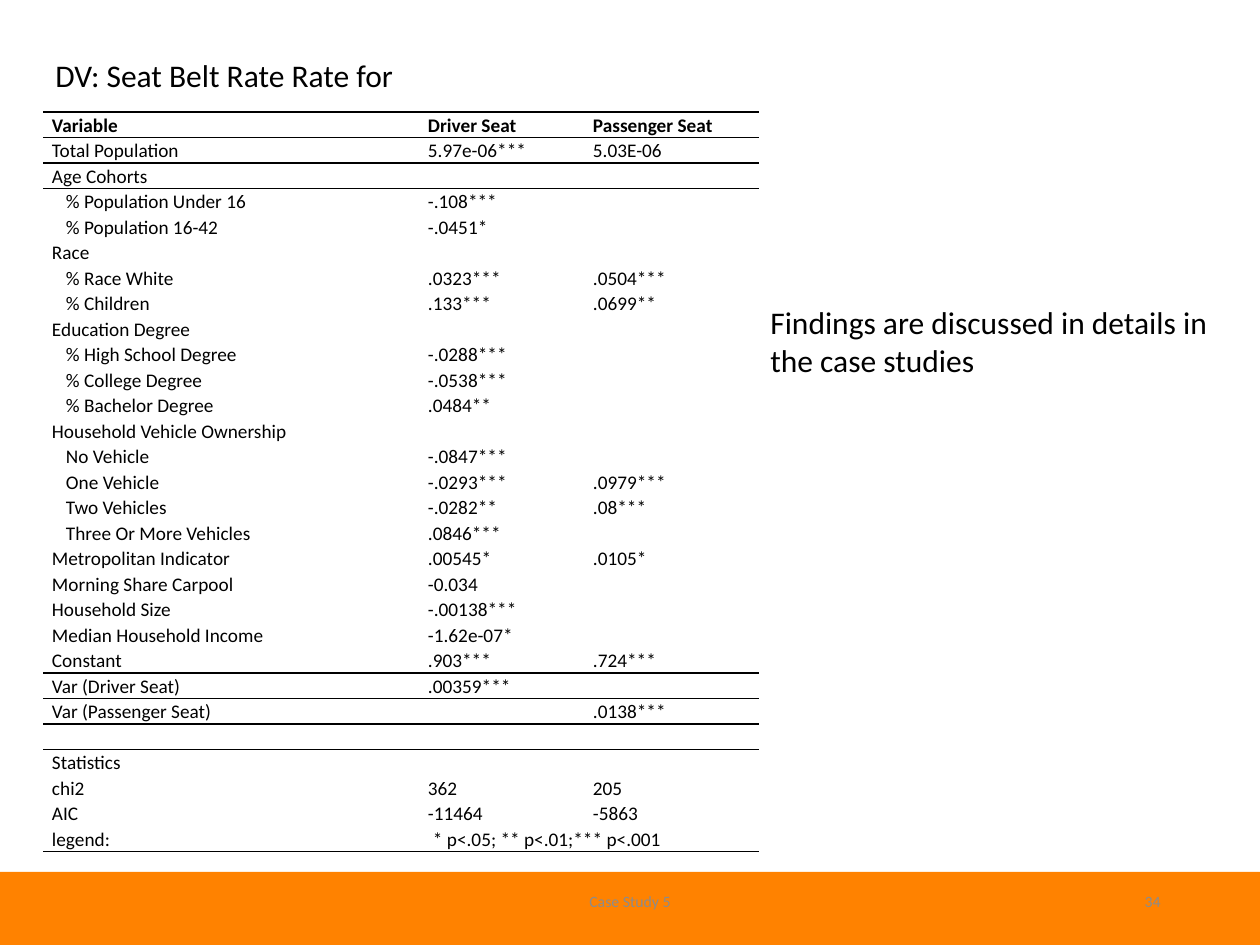
from typing import NamedTuple

from lxml.etree import SubElement
from pptx import Presentation
from pptx.dml.color import RGBColor
from pptx.enum.shapes import MSO_SHAPE as Shape
from pptx.enum.text import MSO_ANCHOR as Anchor, MSO_AUTO_SIZE as Fit, PP_ALIGN as Align
from pptx.oxml import parse_xml
from pptx.oxml.ns import nsdecls, qn
from pptx.util import Emu, Pt

SCALE = 914400 / 126
FONT = "Calibri"
PLAIN = "{2D5ABB26-0587-4C30-8999-92F81FD0307C}"


class Row(NamedTuple):
    name: str
    driver: str = ""
    rider: str = ""
    indent: int = 0


class Label(NamedTuple):
    text: str
    x: int
    y: int
    w: int
    h: int
    size: int = 18
    color: str = "000000"
    align: Align = Align.LEFT
    anchor: Anchor = Anchor.TOP
    fit: Fit = Fit.SHAPE_TO_FIT_TEXT


SUB = 14
ROWS = [
    Row("Variable", "Driver Seat", "Passenger Seat"),
    Row("Total Population", "5.97e-06***", "5.03E-06"),
    Row("Age Cohorts"),
    Row("% Population Under 16", "-.108***", indent=SUB),
    Row("% Population 16-42", "-.0451*", indent=SUB),
    Row("Race"),
    Row("% Race White", ".0323***", ".0504***", SUB),
    Row("% Children", ".133***", ".0699**", SUB),
    Row("Education Degree"),
    Row("% High School Degree", "-.0288***", indent=SUB),
    Row("% College Degree", "-.0538***", indent=SUB),
    Row("% Bachelor Degree", ".0484**", indent=SUB),
    Row("Household Vehicle Ownership"),
    Row("No Vehicle", "-.0847***", indent=SUB),
    Row("One Vehicle", "-.0293***", ".0979***", SUB),
    Row("Two Vehicles", "-.0282**", ".08***", SUB),
    Row("Three Or More Vehicles", ".0846***", indent=SUB),
    Row("Metropolitan Indicator", ".00545*", ".0105*"),
    Row("Morning Share Carpool", "-0.034"),
    Row("Household Size", "-.00138***"),
    Row("Median Household Income", "-1.62e-07*"),
    Row("Constant", ".903***", ".724***"),
    Row("Var (Driver Seat)", ".00359***"),
    Row("Var (Passenger Seat)", "", ".0138***"),
    Row(""),
    Row("Statistics"),
    Row("chi2", "362", "205"),
    Row("AIC", "-11464", "-5863"),
    Row("legend:", "* p<.05; ** p<.01;*** p<.001"),
]
LAST = len(ROWS) - 1
RULED = {0, 1, 21, 23, LAST}  # rows with a line below
COLS = [376, 165, 175]
LABELS = [
    Label("Case Study 5", 417, 876, 426, 50, 9, "8C8C8C", Align.CENTER, Anchor.MIDDLE, Fit.NONE),
    Label("34", 890, 876, 283, 50, 9, "8C8C8C", Align.RIGHT, Anchor.MIDDLE, Fit.NONE),
    Label("DV: Seat Belt Rate Rate for", 43, 50, 466, 50),
    Label("Findings are discussed in details in the case studies", 758, 297, 466, 89),
]


def px(n: int) -> Emu:
    return Emu(round(n * SCALE))


def rgb(color: str) -> RGBColor:
    return RGBColor.from_string(color)


def style(para, size: int, color: str = "000000", bold: bool = False) -> None:
    for run in para.runs:
        font = run.font
        font.name, font.size, font.bold = FONT, Pt(size), bold
        font.color.rgb = rgb(color)


def add_label(slide, item: Label) -> None:
    box = slide.shapes.add_textbox(*map(px, (item.x, item.y, item.w, item.h)))
    frame = box.text_frame
    frame.text = item.text
    frame.word_wrap = True
    frame.auto_size = item.fit
    frame.vertical_anchor = item.anchor
    para = frame.paragraphs[0]
    para.alignment = item.align
    style(para, item.size, item.color)


def add_lines(cell, top: bool, bottom: bool) -> None:
    props = cell._tc.get_or_add_tcPr()
    sides = [tag for tag, on in (("lnT", top), ("lnB", bottom)) if on]
    for i, tag in enumerate(sides):
        props.insert(i, parse_xml(
            f'<a:{tag} {nsdecls("a")} w="12700"><a:solidFill>'
            f'<a:srgbClr val="000000"/></a:solidFill></a:{tag}>'))


def fill_cell(cell, text: str, indent: int, bold: bool) -> None:
    cell.margin_left = cell.margin_right = px(9)
    cell.margin_top = cell.margin_bottom = 0
    cell.vertical_anchor = Anchor.MIDDLE
    cell.fill.background()
    para = cell.text_frame.paragraphs[0]
    para.line_spacing = 1.07
    if text:
        para.text = text
        style(para, 11, bold=bold)
    else:
        # an empty cell still needs the small size, or its row grows
        SubElement(para._p, qn("a:endParaRPr"), sz="1100")
    if indent:
        para._p.get_or_add_pPr().set("marL", str(px(indent)))


def add_results(slide) -> None:
    frame = slide.shapes.add_table(
        len(ROWS), len(COLS), px(43), px(112), px(sum(COLS)), px(740))
    table = frame.table
    table.first_row = table.horz_banding = False
    table._tbl.tblPr.find(qn("a:tableStyleId")).text = PLAIN
    for col, width in zip(table.columns, COLS):
        col.width = px(width)
    for r, row in enumerate(ROWS):
        for c, text in enumerate(row[:3]):
            cell = table.cell(r, c)
            indent = row.indent if c == 0 else 0
            if r == LAST and c == 1:
                indent = 5
            fill_cell(cell, text, indent, bold=r == 0)
            add_lines(cell, top=r == 0 or r - 1 in RULED, bottom=r in RULED)
    table.cell(LAST, 1).merge(table.cell(LAST, 2))


def add_band(slide) -> None:
    band = slide.shapes.add_shape(Shape.RECTANGLE, *map(px, (0, 872, 1260, 73)))
    band.shadow.inherit = False
    band.fill.solid()
    band.fill.fore_color.rgb = rgb("FF8200")
    band.line.fill.background()


def main() -> None:
    deck = Presentation()
    deck.slide_width, deck.slide_height = px(1260), px(945)
    slide = deck.slides.add_slide(deck.slide_layouts[6])
    add_band(slide)
    add_results(slide)
    for item in LABELS:
        add_label(slide, item)
    deck.save("out.pptx")


if __name__ == "__main__":
    main()
